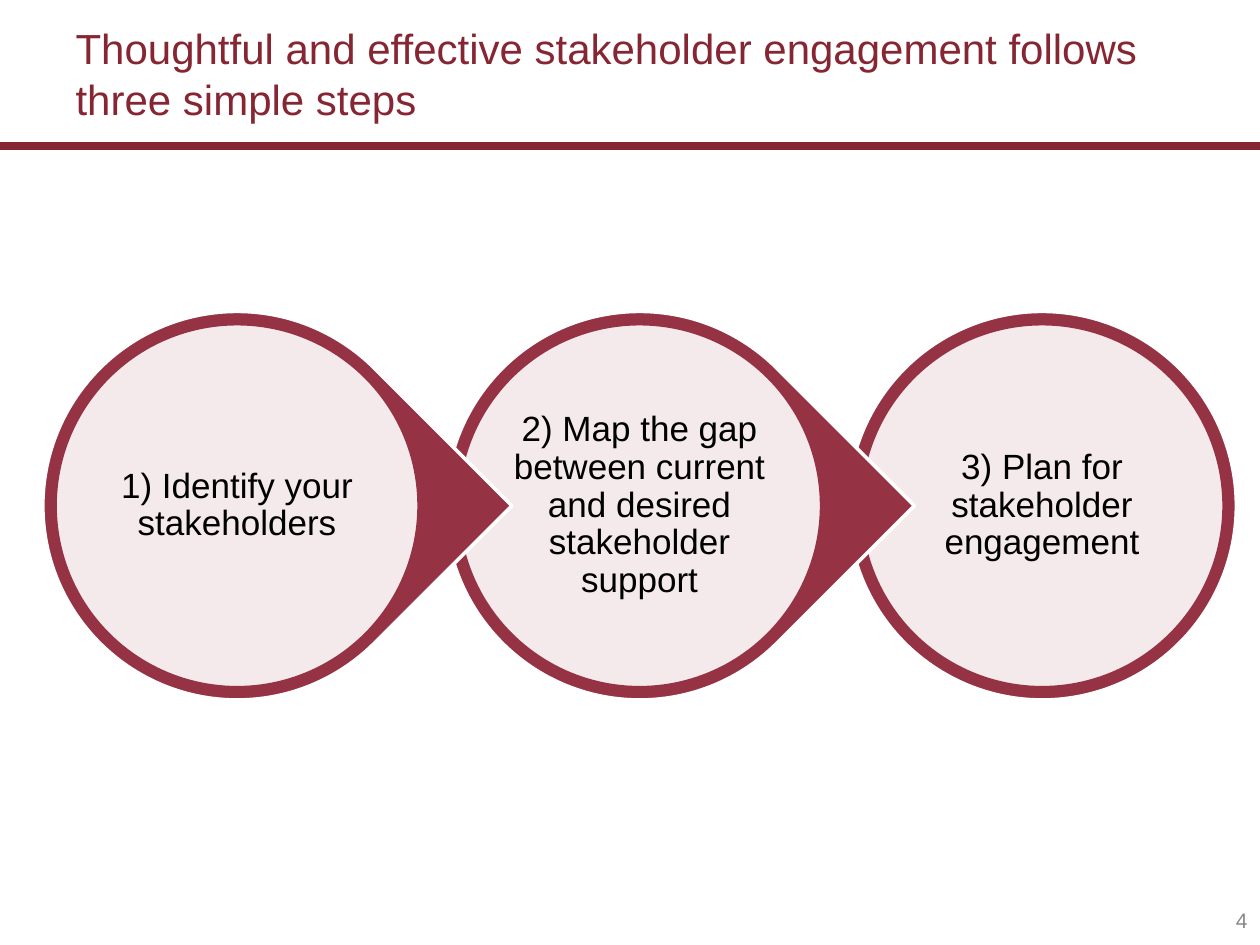
import lxml.etree
import pptx
import pptx.dml.color
import pptx.enum.shapes
import pptx.enum.text
import pptx.oxml
import pptx.oxml.ns
import pptx.util

Pt = pptx.util.Pt
SHAPE = pptx.enum.shapes.MSO_SHAPE
ALIGN = pptx.enum.text.PP_ALIGN
MIDDLE = pptx.enum.text.MSO_ANCHOR.MIDDLE
qn = pptx.oxml.ns.qn

MAROON, ROSE, WHITE, BLACK, GREY = "862633", "953243", "FFFFFF", "000000", "888888"
STEPS = [
    "1) Identify your stakeholders",
    "2) Map the gap between current and desired stakeholder support",
    "3) Plan for stakeholder engagement",
]


def rgb(value):
    return pptx.dml.color.RGBColor.from_string(value)


def write(frame, text, size, color, align, margin):
    frame.word_wrap = True
    frame.vertical_anchor = MIDDLE
    frame.margin_left = frame.margin_right = Pt(margin)
    frame.margin_top = frame.margin_bottom = Pt(margin)
    frame.text = text
    paragraph = frame.paragraphs[0]
    paragraph.alignment = align
    paragraph.font.name = "Arial"
    paragraph.font.size = Pt(size)
    paragraph.font.color.rgb = rgb(color)
    return paragraph


def add_outlined(slide, kind, box, fill, line):
    shape = slide.shapes.add_shape(kind, *map(Pt, box))
    shape.shadow.inherit = False
    shape.fill.solid()
    shape.fill.fore_color.rgb = rgb(fill)
    shape.line.color.rgb = rgb(line)
    shape.line.width = Pt(2)
    return shape


def add_header(slide, left, top, width, height):
    title = slide.shapes.title
    title.left, title.top = Pt(left), Pt(top)
    title.width, title.height = Pt(width), Pt(height)
    write(title.text_frame,
          "Thoughtful and effective stakeholder engagement follows three simple steps",
          24, MAROON, ALIGN.LEFT, 7.2)
    bottom = Pt(top + height)
    rule = slide.shapes.add_connector(
        pptx.enum.shapes.MSO_CONNECTOR.STRAIGHT, 0, bottom, Pt(720), bottom)
    rule.line.color.rgb = rgb(MAROON)
    rule.line.width = Pt(5)
    lxml.etree.SubElement(rule._element.spPr, qn("a:effectLst"))


def add_step(slide, left, top, size, text, points_on):
    """A ring around a tinted disc; its right side is a tip if points_on."""
    kind = SHAPE.TEAR if points_on else SHAPE.OVAL
    ring = add_outlined(slide, kind, (left, top, size, size), ROSE, WHITE)
    if points_on:
        ring.rotation = 45

    inset = 7
    disc_size = size - 2 * inset
    disc = add_outlined(slide, SHAPE.OVAL,
                        (left + inset, top + inset, disc_size, disc_size), WHITE, ROSE)
    fill_color = disc.fill._xPr.find(qn("a:solidFill"))[0]
    lxml.etree.SubElement(fill_color, qn("a:alpha"), val="90000")
    write(disc.text_frame, text, 20, BLACK, ALIGN.CENTER, 0).line_spacing = 0.9


def add_chain(slide, left, top, size, pitch):
    """Steps run left to right, each tip lying over the next ring."""
    last = len(STEPS) - 1
    for index in range(last, -1, -1):
        add_step(slide, left + index * pitch, top, size, STEPS[index], index < last)


def add_page_number(slide, left, top, width, height):
    number = slide.shapes.add_textbox(*map(Pt, (left, top, width, height)))
    write(number.text_frame, "4", 12, GREY, ALIGN.RIGHT, 7.2)


def main():
    deck = pptx.Presentation()
    deck.slide_width, deck.slide_height = Pt(720), Pt(540)
    slide = deck.slides.add_slide(deck.slide_layouts[5])
    add_header(slide, 36, 0, 648, 83.5)
    add_chain(slide, 24.5, 178, 222, 230)
    add_page_number(slide, 552, 511, 168, 29)
    deck.save("out.pptx")


if __name__ == "__main__":
    main()
